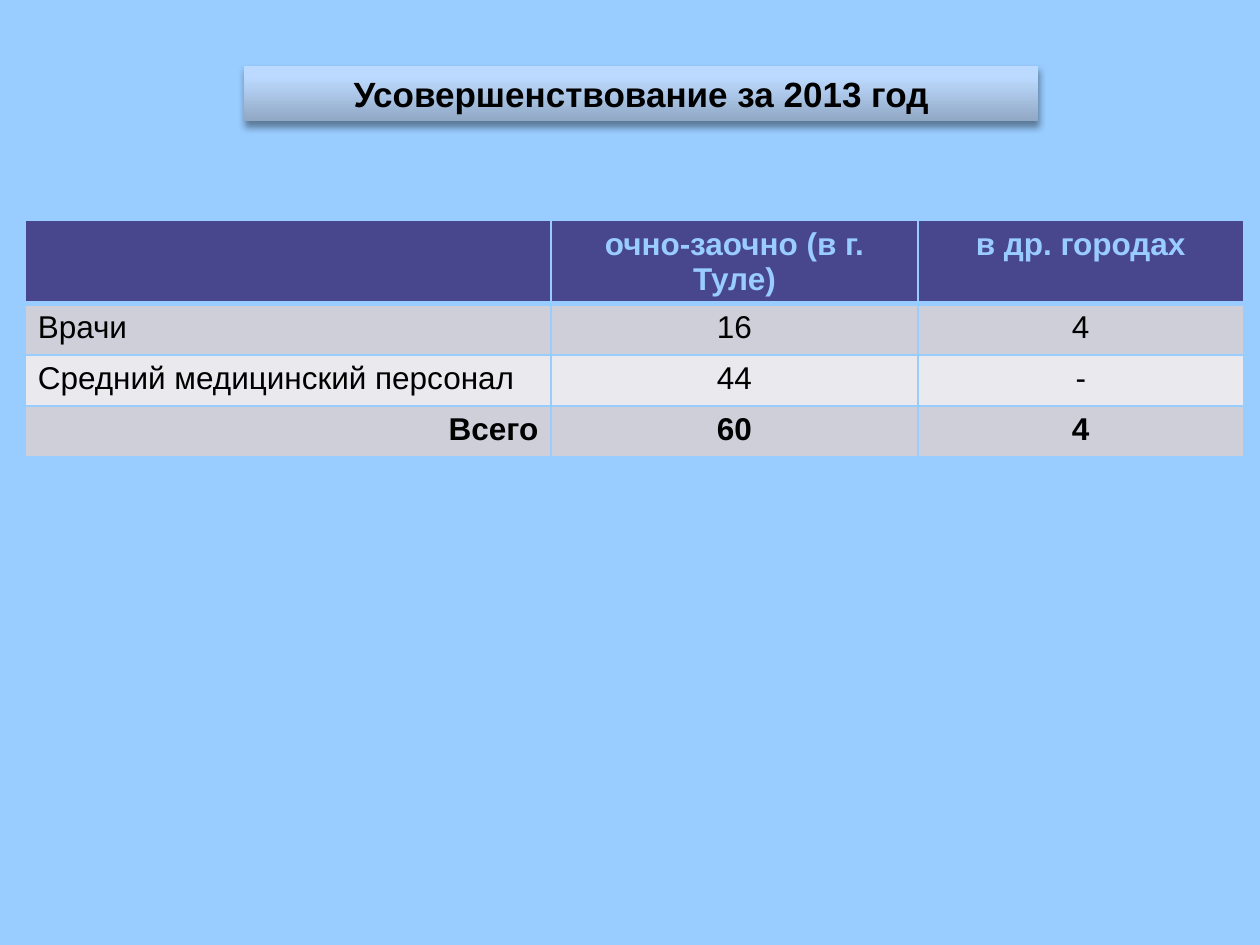
"""Build a one-slide deck with a table of staff training in 2013."""
from dataclasses import dataclass

from pptx import Presentation, util as u
from pptx.dml.color import RGBColor
from pptx.enum import text
from pptx.oxml import parse_xml
from pptx.oxml.ns import nsdecls

LEFT, CENTER, RIGHT = text.PP_ALIGN.LEFT, text.PP_ALIGN.CENTER, text.PP_ALIGN.RIGHT


@dataclass(frozen=True)
class Theme:
    font: str = "Arial"
    title_size: float = 20
    body_size: float = 18
    page: str = "99CCFF"
    ink: str = "000000"
    header: str = "48468C"
    band_dark: str = "CFCFDA"
    band_light: str = "E9E9EE"
    title_stops: tuple = ((0, "91A8C4"), (80, "BCDAFF"), (100, "BEDBFF"))
    thin: float = 1
    thick: float = 3


@dataclass(frozen=True)
class Row:
    values: tuple[str, str, str]
    fill: str
    ink: str
    bold: bool = False
    label_align: text.PP_ALIGN = LEFT
    top: float = 1
    bottom: float = 1


THEME = Theme()
COLUMN_WIDTHS = (300.4, 209.8, 186)
ROW_HEIGHT = 29.2
ROWS = (
    Row(("", "очно-заочно (в г. Туле)", "в др. городах"), THEME.header, THEME.page,
        bold=True, bottom=THEME.thick),
    Row(("Врачи", "16", "4"), THEME.band_dark, THEME.ink, top=THEME.thick),
    Row(("Средний медицинский персонал", "44", "-"), THEME.band_light, THEME.ink),
    Row(("Всего", "60", "4"), THEME.band_dark, THEME.ink, bold=True, label_align=RIGHT),
)


def write(para, words: str, size: float, ink: str, bold: bool, align) -> None:
    """Put one formatted span in a paragraph."""
    para.alignment = align
    span = para.add_run()
    span.text = words
    formats = {"name": THEME.font, "size": u.Pt(size), "bold": bold}
    for name, value in formats.items():
        setattr(span.font, name, value)
    span.font.color.rgb = RGBColor.from_string(ink)


def add_title(page, words: str) -> None:
    """Fill the title placeholder as a shaded bar with a soft shadow."""
    box = page.shapes.title
    places = {"left": 139.7, "top": 37.6, "width": 453.6, "height": 31.6}
    for name, value in places.items():
        setattr(box, name, u.Pt(value))
    stops = "".join(
        f'<a:gs pos="{place * 1000}"><a:srgbClr val="{color}"/></a:gs>'
        for place, color in THEME.title_stops
    )
    properties = box._element.spPr
    properties.append(parse_xml(
        f'<a:gradFill {nsdecls("a")} rotWithShape="1"><a:gsLst>{stops}</a:gsLst>'
        '<a:lin ang="16200000" scaled="0"/></a:gradFill>'
    ))
    properties.append(parse_xml(
        f'<a:effectLst {nsdecls("a")}><a:outerShdw blurRad="{u.Pt(4)}" dist="{u.Pt(3)}" '
        f'dir="5400000" rotWithShape="0"><a:srgbClr val="{THEME.ink}">'
        '<a:alpha val="40000"/></a:srgbClr></a:outerShdw></a:effectLst>'
    ))
    frame = box.text_frame
    formats = {"word_wrap": True, "auto_size": text.MSO_AUTO_SIZE.NONE,
               "vertical_anchor": text.MSO_ANCHOR.BOTTOM}
    for name, value in formats.items():
        setattr(frame, name, value)
    write(frame.paragraphs[0], words, THEME.title_size, THEME.ink, True, CENTER)


def style_cell(cell, row: Row) -> None:
    """Give a cell its borders and fill."""
    properties = cell._tc.get_or_add_tcPr()
    widths = {"L": THEME.thin, "R": THEME.thin, "T": row.top, "B": row.bottom}
    for side, width in widths.items():
        properties.append(parse_xml(
            f'<a:ln{side} {nsdecls("a")} w="{u.Pt(width)}"><a:solidFill>'
            f'<a:srgbClr val="{THEME.page}"/></a:solidFill></a:ln{side}>'
        ))
    cell.fill.solid()
    cell.fill.fore_color.rgb = RGBColor.from_string(row.fill)


def add_training_table(page) -> None:
    """Draw the training table."""
    table = page.shapes.add_table(
        len(ROWS), len(COLUMN_WIDTHS), u.Pt(14.4), u.Pt(126),
        u.Pt(sum(COLUMN_WIDTHS)), u.Pt(ROW_HEIGHT * len(ROWS)),
    ).table
    table.horz_banding = False
    for column, width in zip(table.columns, COLUMN_WIDTHS):
        column.width = u.Pt(width)
    for line, row in zip(table.rows, ROWS):
        line.height = u.Pt(ROW_HEIGHT)
        aligns = (row.label_align, CENTER, CENTER)
        for cell, words, align in zip(line.cells, row.values, aligns):
            style_cell(cell, row)
            if words:
                write(cell.text_frame.paragraphs[0], words, THEME.body_size,
                      row.ink, row.bold, align)


def main() -> None:
    """Build and save the deck."""
    deck = Presentation()
    deck.slide_width, deck.slide_height = u.Pt(720), u.Pt(540)
    page = deck.slides.add_slide(deck.slide_layouts.get_by_name("Title Only"))
    page.background.fill.solid()
    page.background.fill.fore_color.rgb = RGBColor.from_string(THEME.page)
    add_title(page, "Усовершенствование за 2013 год")
    add_training_table(page)
    deck.save("out.pptx")


if __name__ == "__main__":
    main()
